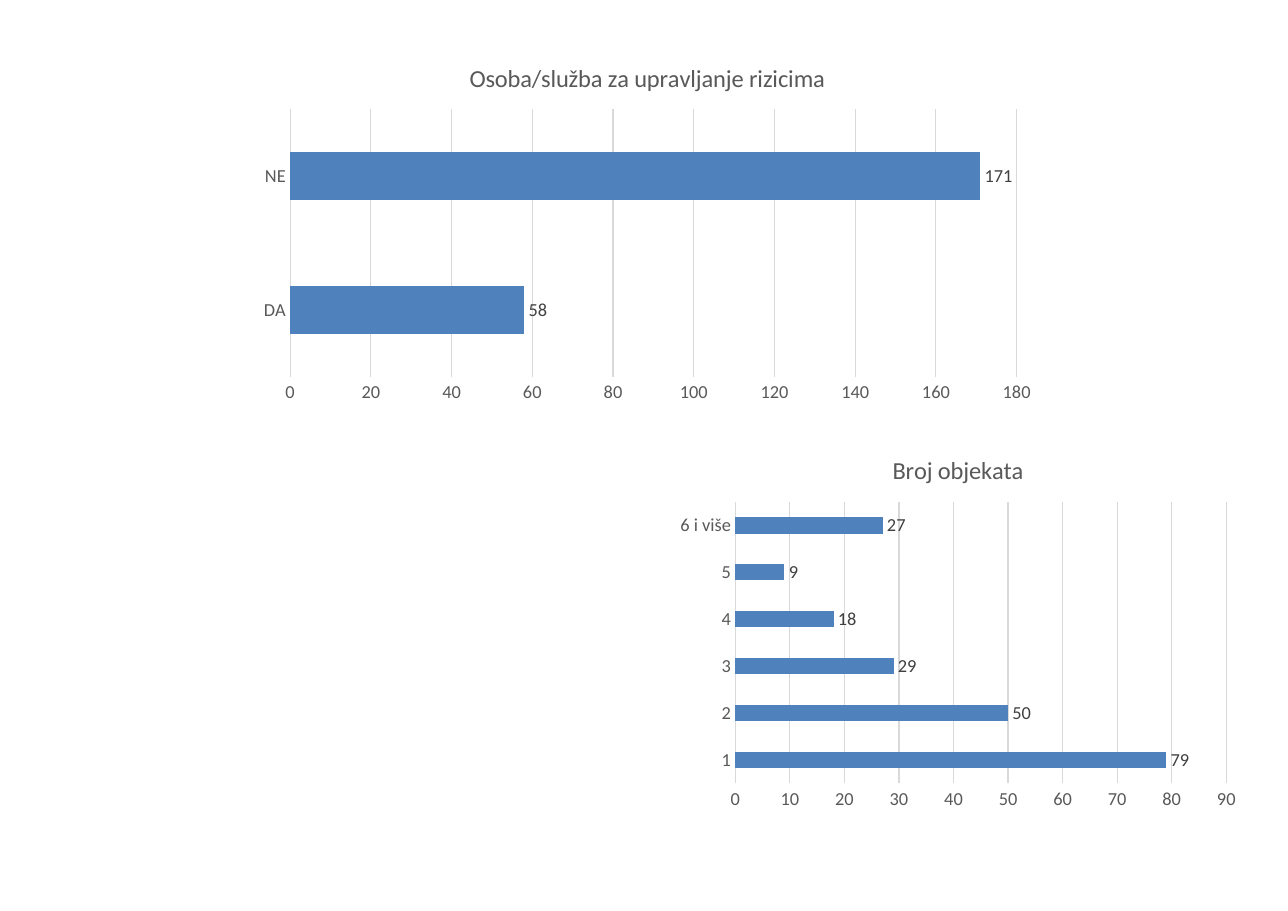
import dataclasses

import pptx
import pptx.chart.data
import pptx.dml.color
import pptx.enum.chart
import pptx.oxml
import pptx.oxml.ns
import pptx.util


@dataclasses.dataclass(frozen=True)
class Theme:
    font: str = "Calibri"
    background: str = "FFFFFF"
    text: str = "000000"
    bar: str = "4F81BD"
    rule: str = "D9D9D9"
    heading: str = "595959"
    value: str = "404040"
    title_size: int = 16
    label_size: int = 12
    base_size: int = 10
    rule_width: float = 0.75
    gap_width: int = 182


class SurveySlide:
    def __init__(self, slide, theme):
        self.slide = slide
        self.theme = theme

    def color(self, code):
        return pptx.dml.color.RGBColor.from_string(code)

    def style_font(self, font, size, code):
        font.name = self.theme.font
        font.size = pptx.util.Pt(size)
        font.bold = False
        font.color.rgb = self.color(code)

    def style_rule(self, line):
        line.color.rgb = self.color(self.theme.rule)
        line.width = pptx.util.Pt(self.theme.rule_width)

    def style_axis(self, axis):
        axis.major_tick_mark = pptx.enum.chart.XL_TICK_MARK.NONE
        axis.minor_tick_mark = pptx.enum.chart.XL_TICK_MARK.NONE
        self.style_font(axis.tick_labels.font, self.theme.label_size, self.theme.heading)

    def style_background(self, chart):
        background = pptx.oxml.parse_xml(
            f'<c:spPr {pptx.oxml.ns.nsdecls("c", "a")}><a:solidFill>'
            f'<a:srgbClr val="{self.theme.background}"/></a:solidFill>'
            '<a:ln><a:noFill/></a:ln></c:spPr>')
        chart.element.find(pptx.oxml.ns.qn("c:chart")).addnext(background)

    def style_title(self, chart, question):
        chart.has_title = True
        heading = chart.chart_title.text_frame
        heading.text = question
        for run in heading.paragraphs[0].runs:
            self.style_font(run.font, self.theme.title_size, self.theme.heading)
        chart.chart_title.include_in_layout = False

    def style_bars(self, plot):
        plot.gap_width = self.theme.gap_width
        plot.vary_by_categories = False
        fill = plot.series[0].format.fill
        fill.solid()
        fill.fore_color.rgb = self.color(self.theme.bar)
        plot.has_data_labels = True
        labels = plot.data_labels
        labels.show_value = True
        labels.position = pptx.enum.chart.XL_LABEL_POSITION.OUTSIDE_END
        self.style_font(labels.font, self.theme.label_size, self.theme.value)

    def bar_chart(self, question, answers, left, top, width, height):
        data = pptx.chart.data.CategoryChartData()
        data.categories = answers.keys()
        data.add_series(question, answers.values())
        chart = self.slide.shapes.add_chart(
            pptx.enum.chart.XL_CHART_TYPE.BAR_CLUSTERED,
            *map(pptx.util.Inches, (left, top, width, height)), data).chart
        chart.has_legend = False
        self.style_font(chart.font, self.theme.base_size, self.theme.text)
        self.style_background(chart)
        self.style_title(chart, question)
        self.style_bars(chart.plots[0])
        self.style_axis(chart.category_axis)
        self.style_axis(chart.value_axis)
        self.style_rule(chart.category_axis.format.line)
        self.style_rule(chart.value_axis.major_gridlines.format.line)
        chart.value_axis.format.line.fill.background()


def main():
    presentation = pptx.Presentation()
    presentation.slide_width = pptx.util.Inches(11.69)
    presentation.slide_height = pptx.util.Inches(8.27)
    blank_layout = presentation.slide_layouts[6]
    survey = SurveySlide(presentation.slides.add_slide(blank_layout), Theme())
    survey.bar_chart("Osoba/služba za upravljanje rizicima",
                     {"DA": 58, "NE": 171}, 2.25, 0.4, 7.25, 3.33)
    survey.bar_chart("Broj objekata",
                     {"1": 79, "2": 50, "3": 29, "4": 18, "5": 9, "6 i više": 27},
                     6.07, 3.96, 5.25, 3.46)
    presentation.save("out.pptx")


if __name__ == "__main__":
    main()
